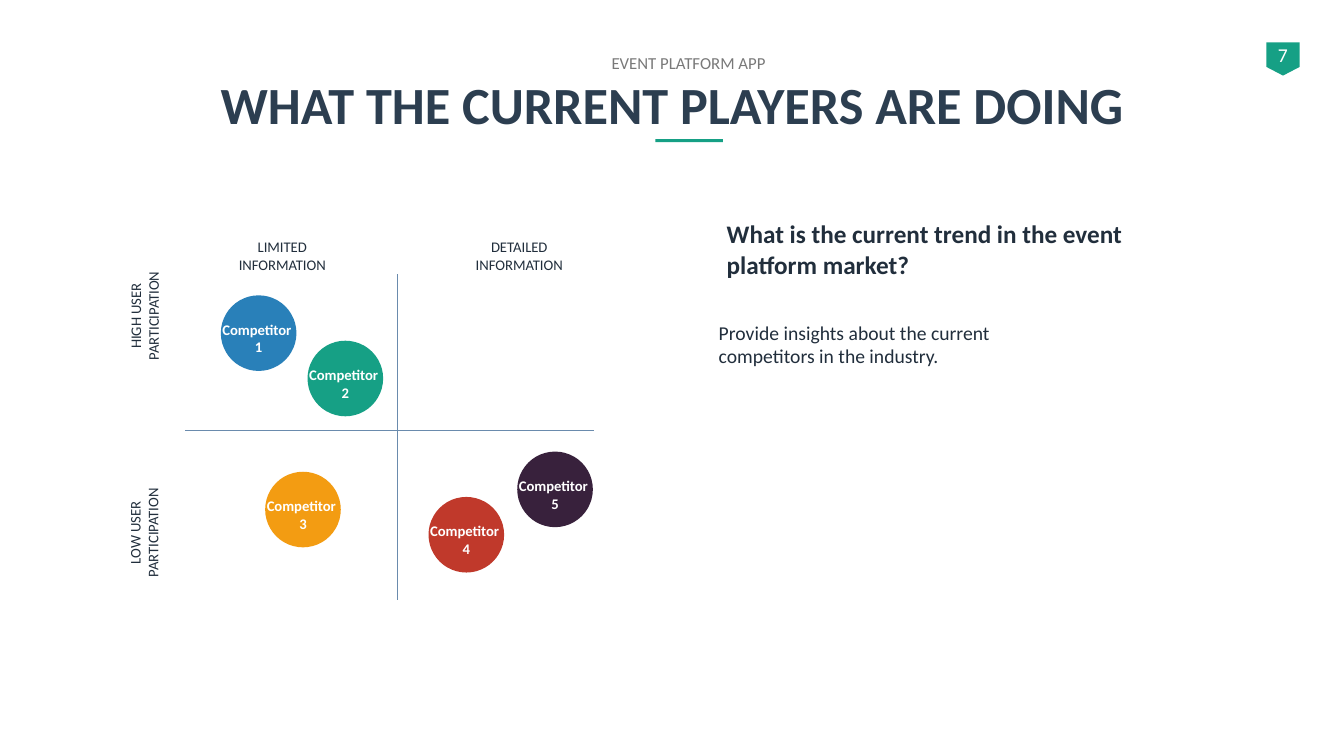
import dataclasses

import lxml.etree
import pptx
import pptx.dml.color
import pptx.enum.shapes
import pptx.enum.text
import pptx.oxml.ns
import pptx.shapes.autoshape
import pptx.shapes.shapetree
import pptx.util

Inches = pptx.util.Inches
ALIGN = pptx.enum.text.PP_ALIGN
ANCHOR = pptx.enum.text.MSO_ANCHOR
SHAPE = pptx.enum.shapes.MSO_SHAPE

FONT = "Calibri"
COLORS = {
    "teal": "16A085",
    "navy": "2C3E50",
    "ink": "212E3C",
    "gray": "797979",
    "axis": "6A8BAD",
    "white": "FFFFFF",
    "blue": "2980B9",
    "orange": "F39C12",
    "red": "C0392B",
    "plum": "38213C",
}
CIRCLE_SIZE = 0.75
CAPTION_WIDTH = 0.93
CAPTION_HEIGHT = 0.45


@dataclasses.dataclass(frozen=True)
class Label:
    lines: tuple[str, ...]
    left: float
    top: float
    width: float
    height: float
    size: float = 10.5
    color: str = "ink"
    bold: bool = False
    align: ALIGN = ALIGN.CENTER
    anchor: ANCHOR = ANCHOR.TOP
    wrap: bool = True
    rotation: float = 0


@dataclasses.dataclass(frozen=True)
class Competitor:
    number: int
    left: float
    top: float
    color: str


@dataclasses.dataclass(frozen=True)
class Axis:
    start: tuple[float, float]
    end: tuple[float, float]


HEADINGS = (
    Label(("7",), 12.51, 0.38, 0.43, 0.34, size=14, color="white", wrap=False),
    Label(("WHAT THE CURRENT PLAYERS ARE DOING",), 0.67, 0.66, 12, 0.73,
          size=37.3, color="navy", bold=True, anchor=ANCHOR.MIDDLE),
    Label(("EVENT PLATFORM APP",), 0.83, 0.47, 12, 0.3, size=12, color="gray"),
)
INSIGHTS = (
    Label(("What is the current trend in the event platform market?",),
          7.11, 2.12, 4.4, 0.71, size=18, bold=True, align=ALIGN.LEFT),
    Label(("Provide insights about the current competitors in the industry.",),
          7.03, 3.13, 3.69, 0.57, size=14, align=ALIGN.LEFT),
)
AXIS_LABELS = (
    Label(("LIMITED INFORMATION",), 2.13, 2.31, 1.34, 0.45),
    Label(("DETAILED INFORMATION",), 4.44, 2.31, 1.42, 0.45),
    Label(("HIGH USER PARTICIPATION",), 0.76, 2.91, 1.34, 0.45, rotation=270),
    Label(("LOW USER PARTICIPATION",), 0.65, 5.06, 1.55, 0.45, rotation=270),
)
AXES = (
    Axis((3.94, 2.72), (3.94, 5.95)),
    Axis((1.84, 4.27), (5.89, 4.27)),
)
COMPETITORS = (
    Competitor(1, 2.19, 2.93, "blue"),
    Competitor(2, 3.05, 3.38, "teal"),
    Competitor(3, 2.63, 4.68, "orange"),
    Competitor(4, 4.25, 4.93, "red"),
    Competitor(5, 5.13, 4.48, "plum"),
)


def rgb(name: str) -> pptx.dml.color.RGBColor:
    return pptx.dml.color.RGBColor.from_string(COLORS[name])


def draw_shape(shapes: pptx.shapes.shapetree.GroupShapes, kind: SHAPE, left: float, top: float,
               width: float, height: float, color: str) -> pptx.shapes.autoshape.Shape:
    shape = shapes.add_shape(kind, Inches(left), Inches(top), Inches(width), Inches(height))
    shape.shadow.inherit = False
    shape.fill.solid()
    shape.fill.fore_color.rgb = rgb(color)
    shape.line.fill.background()
    return shape


def draw_label(shapes: pptx.shapes.shapetree.GroupShapes, label: Label) -> None:
    box = shapes.add_textbox(Inches(label.left), Inches(label.top),
                             Inches(label.width), Inches(label.height))
    box.rotation = label.rotation
    frame = box.text_frame
    frame.word_wrap = label.wrap
    frame.vertical_anchor = label.anchor
    for index, line in enumerate(label.lines):
        para = frame.add_paragraph() if index else frame.paragraphs[0]
        para.alignment = label.align
        span = para.add_run()
        span.text = line
        span.font.name = FONT
        span.font.size = pptx.util.Pt(label.size)
        span.font.bold = label.bold
        span.font.color.rgb = rgb(label.color)


def draw_axis(shapes: pptx.shapes.shapetree.GroupShapes, axis: Axis) -> None:
    line = shapes.add_connector(pptx.enum.shapes.MSO_CONNECTOR.STRAIGHT,
                                *map(Inches, axis.start + axis.end))
    line.line.color.rgb = rgb("axis")
    line.line.width = pptx.util.Pt(0.75)
    properties = line._element.find(pptx.oxml.ns.qn("p:spPr"))
    lxml.etree.SubElement(properties, pptx.oxml.ns.qn("a:effectLst"))


def draw_competitor(shapes: pptx.shapes.shapetree.SlideShapes, competitor: Competitor) -> None:
    group = shapes.add_group_shape()
    draw_shape(group.shapes, SHAPE.OVAL, competitor.left, competitor.top,
               CIRCLE_SIZE, CIRCLE_SIZE, competitor.color)
    draw_label(group.shapes, Label(
        ("Competitor ", str(competitor.number)),
        competitor.left + (CIRCLE_SIZE - CAPTION_WIDTH) / 2, competitor.top + 0.2,
        CAPTION_WIDTH, CAPTION_HEIGHT, color="white", bold=True, wrap=False))


def main() -> None:
    deck = pptx.Presentation()
    deck.slide_width = Inches(13.33)
    deck.slide_height = Inches(7.5)
    page = deck.slides.add_slide(deck.slide_layouts[6])

    badge = draw_shape(page.shapes, SHAPE.PENTAGON, 12.56, 0.42, 0.33, 0.33, "teal")
    badge.rotation = 90
    badge.adjustments[0] = 0.26
    draw_shape(page.shapes, SHAPE.RECTANGLE, 6.5, 1.38, 0.67, 0.03, "teal")

    for label in HEADINGS + INSIGHTS:
        draw_label(page.shapes, label)
    matrix = page.shapes.add_group_shape()
    for axis in AXES:
        draw_axis(matrix.shapes, axis)
    for label in AXIS_LABELS:
        draw_label(page.shapes, label)
    for competitor in COMPETITORS:
        draw_competitor(page.shapes, competitor)

    deck.save("out.pptx")


if __name__ == "__main__":
    main()
